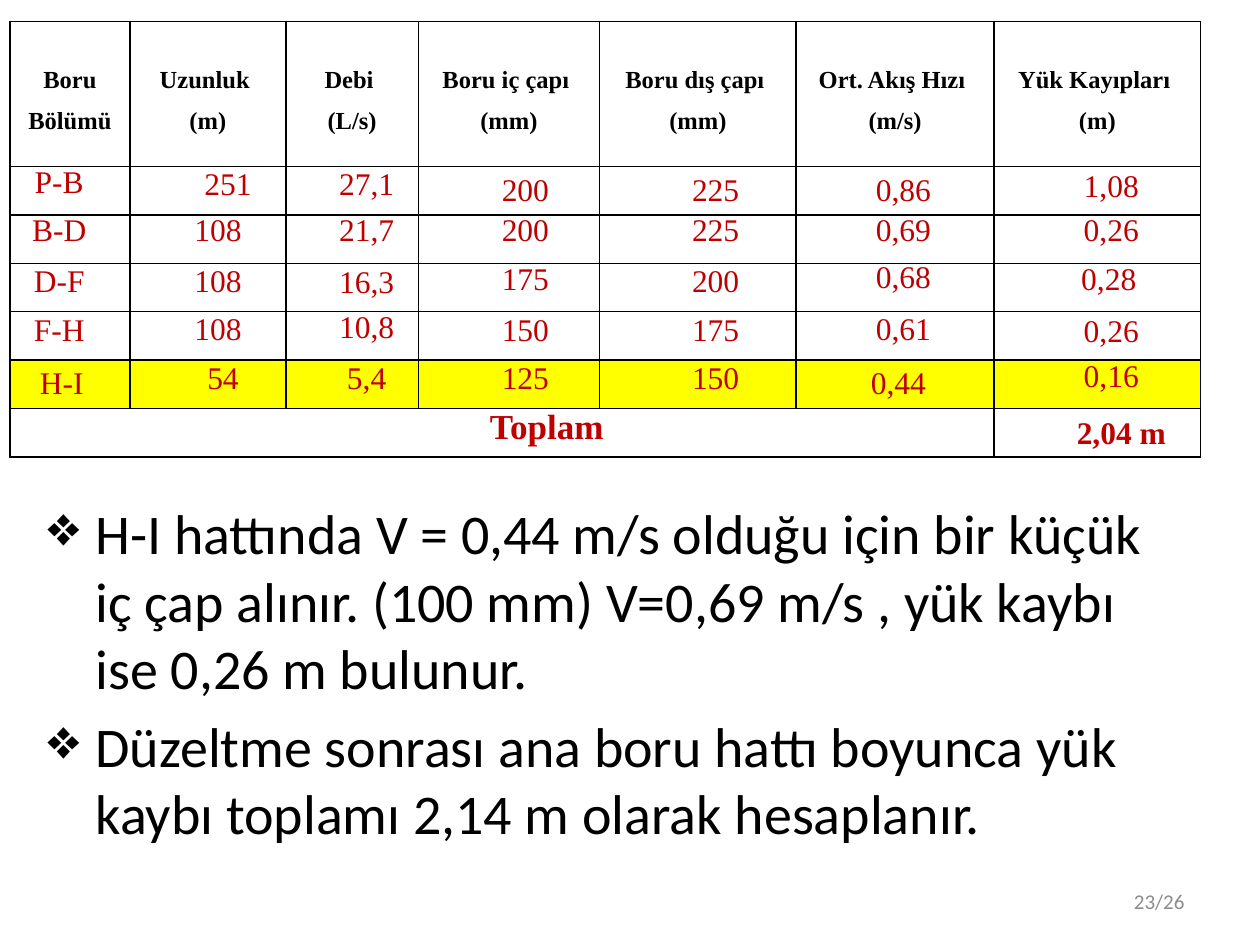
import pptx
import pptx.util
import pptx.dml.color
import pptx.enum.text
import pptx.oxml
import pptx.oxml.ns

ROMAN = "Times New Roman"
RED = "C00000"
ALIGN = pptx.enum.text.PP_ALIGN
ANCHOR = pptx.enum.text.MSO_ANCHOR
COLS, ROWS = 1000, 750
WIDE = pptx.util.Inches(10)
HIGH = pptx.util.Inches(7.5)

SPANS = [95, 124, 105, 144, 156, 157, 164]
HEAD = [
    ["Boru Bölümü"],
    ["Uzunluk ", "(m)"],
    ["Debi ", "(L/s)"],
    ["Boru iç çapı ", "(mm)"],
    ["Boru dış çapı ", "(mm)"],
    ["Ort. Akış Hızı ", "(m/s)"],
    ["Yük Kayıpları ", "(m)"],
]
LEFTS = [-28, 98, 216, 342, 493, 642, 807]
DATA = [
    (["P-B", "251", "27,1", "200", "225", "0,86", "1,08"],
     [107, 108, 108, 113, 113, 113, 110]),
    (["B-D", "108", "21,7", "200", "225", "0,69", "0,26"], [145] * 7),
    (["D-F", "108", "16,3", "175", "200", "0,68", "0,28"],
     [185, 185, 186, 184, 185, 182, 184]),
    (["F-H", "108", "10,8", "150", "175", "0,61", "0,26"],
     [224, 223, 222, 224, 224, 223, 225]),
    (["H-I", "54", "5,4", "125", "150", "0,44", "0,16"],
     [266, 262, 262, 262, 262, 266, 261]),
]
SHIFT = {"251": 8, "54": 4, "H-I": 2, "0,44": -4, "0,28": -2}
NOTES = [
    "H-I hattında V = 0,44 m/s olduğu için bir küçük iç çap alınır. "
    "(100 mm) V=0,69 m/s , yük kaybı ise 0,26 m bulunur.",
    "Düzeltme sonrası ana boru hattı boyunca yük kaybı toplamı "
    "2,14 m olarak hesaplanır.",
]


def col(n):
    return round(WIDE * n / COLS)


def row(n):
    return round(HIGH * n / ROWS)


def tint(code):
    return pptx.dml.color.RGBColor.from_string(code)


def write(para, text, size, face, code, bold=False):
    run = para.add_run()
    run.text = text
    font = run.font
    font.size = pptx.util.Pt(size)
    font.name = face
    font.bold = bold
    font.color.rgb = tint(code)


def frame(slide, box):
    x, y, w, h = box
    shape = slide.shapes.add_textbox(col(x), row(y), col(w), row(h))
    text = shape.text_frame
    text.word_wrap = True
    return text


def label(slide, box, text, size=18, bold=False):
    area = frame(slide, box)
    area.auto_size = pptx.enum.text.MSO_AUTO_SIZE.SHAPE_TO_FIT_TEXT
    para = area.paragraphs[0]
    para.alignment = ALIGN.CENTER
    write(para, text, size, ROMAN, RED, bold)


def edge(cell):
    props = cell._tc.get_or_add_tcPr()
    for side in "LRTB":
        props.append(pptx.oxml.parse_xml(
            f'<a:ln{side} {pptx.oxml.ns.nsdecls("a")} w="12700"><a:solidFill>'
            f'<a:srgbClr val="000000"/></a:solidFill></a:ln{side}>'))


def grid(slide, box):
    x, y, w, h = box
    last = len(DATA) + 1
    table = slide.shapes.add_table(
        last + 1, len(SPANS), col(x), row(y), col(w), row(h)).table
    table.first_row = table.horz_banding = False
    for part, span in zip(table.columns, SPANS):
        part.width = col(span)
    top = 115
    for n, part in enumerate(table.rows):
        part.height = row((h - top) / last if n else top)
        for cell in part.cells:
            cell.margin_left = cell.margin_right = col(7)
            cell.margin_top = cell.margin_bottom = 0
            edge(cell)
            if n == last - 1:
                cell.fill.solid()
                cell.fill.fore_color.rgb = tint("FFFF00")
            else:
                cell.fill.background()
    table.cell(last, 0).merge(table.cell(last, len(SPANS) - 2))
    for cell, lines in zip(table.rows[0].cells, HEAD):
        cell.vertical_anchor = ANCHOR.MIDDLE
        for n, line in enumerate(lines):
            area = cell.text_frame
            para = area.add_paragraph() if n else area.paragraphs[0]
            para.alignment = ALIGN.CENTER
            para.line_spacing = 1.5
            write(para, line, 14, ROMAN, "000000", True)


def values(slide, box):
    x, y = box[:2]
    for texts, tops in DATA:
        for text, left, top in zip(texts, LEFTS, tops):
            spot = (x + left + SHIFT.get(text, 0), y + top, 134, 40)
            label(slide, spot, text)
    label(slide, (x + 359, y + 299, 134, 44), "Toplam", 20, True)
    label(slide, (x + 815, y + 306, 134, 40), "2,04 m", 18, True)


def notes(slide, box):
    area = frame(slide, box)
    area.margin_top = row(68)
    for n, text in enumerate(NOTES):
        para = area.add_paragraph() if n else area.paragraphs[0]
        para.space_before = pptx.util.Pt(6.4)
        props = para._p.get_or_add_pPr()
        props.set("marL", str(col(38)))
        props.set("indent", str(-col(38)))
        props.append(pptx.oxml.parse_xml(
            f'<a:buChar {pptx.oxml.ns.nsdecls("a")} char="❖"/>'))
        write(para, text, 32, "Calibri", "000000")


def folio(slide, box):
    area = frame(slide, box)
    area.vertical_anchor = ANCHOR.MIDDLE
    para = area.paragraphs[0]
    para.alignment = ALIGN.RIGHT
    write(para, "23/26", 12, "Calibri", "8C8C8C")


def main():
    deck = pptx.Presentation()
    deck.slide_width, deck.slide_height = WIDE, HIGH
    slide = deck.slides.add_slide(deck.slide_layouts[6])
    area = (8, 17, sum(SPANS), 346)
    notes(slide, (28, 328, 900, 397))
    grid(slide, area)
    values(slide, area)
    folio(slide, (717, 695, 233, 40))
    deck.save("out.pptx")


if __name__ == "__main__":
    main()
